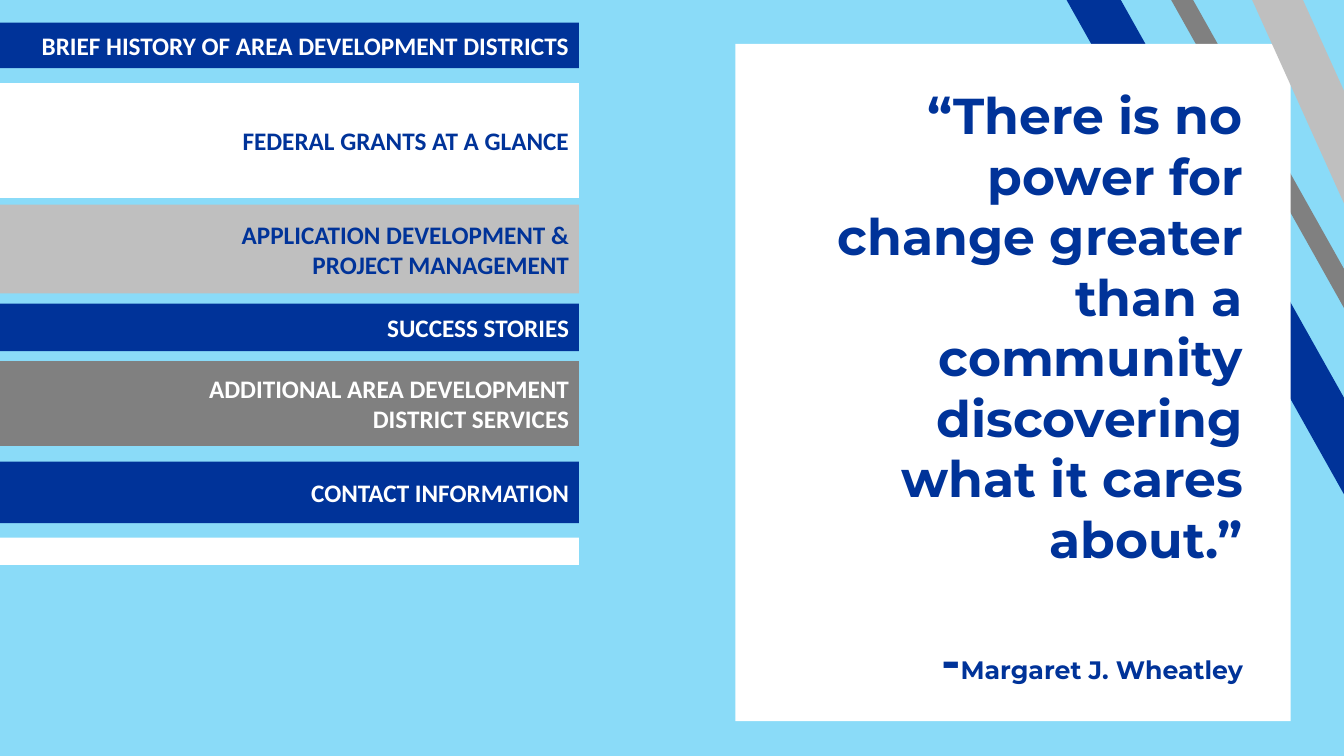
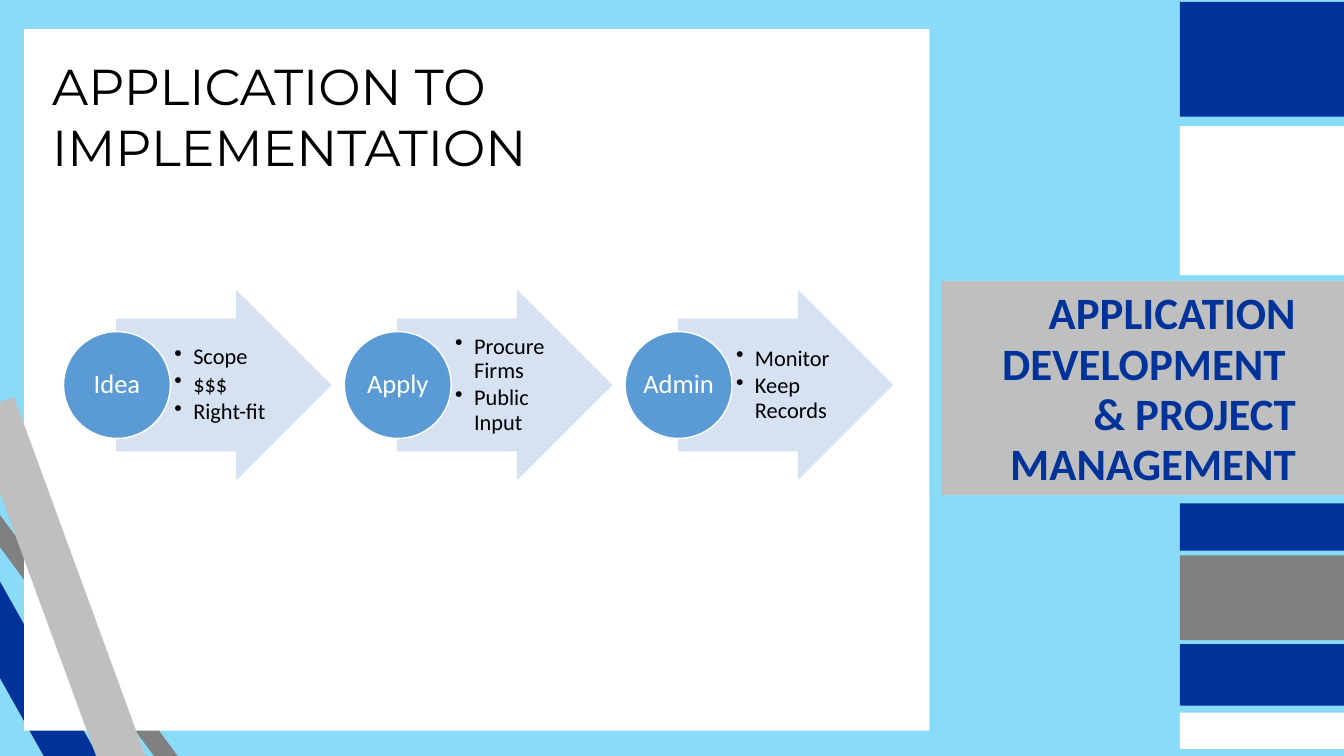
from lxml import etree
from pptx import Presentation
from pptx.dml.color import RGBColor
from pptx.enum import shapes, text
from pptx.oxml import ns
from pptx.util import Pt

SKY = RGBColor(0x8A, 0xDB, 0xF8)
NAVY = RGBColor(0x00, 0x33, 0x99)
WHITE = RGBColor(0xFF, 0xFF, 0xFF)
SILVER = RGBColor(0xBF, 0xBF, 0xBF)
GRAY = RGBColor(0x80, 0x80, 0x80)
BLACK = RGBColor(0x00, 0x00, 0x00)
DISC_BLUE = RGBColor(0x5B, 0x9B, 0xD5)
ARROW_BLUE = RGBColor(0xD6, 0xE1, 0xF1)

WIDTH, HEIGHT = 960, 540
BODY_FONT, HEAD_FONT = "Calibri", "Montserrat"
BAND_COLOURS = (NAVY, WHITE, SILVER, NAVY, GRAY, NAVY, WHITE)
STRIPE_COLOURS = (NAVY, GRAY, SILVER)
RIGHT, CENTER = text.PP_ALIGN.RIGHT, text.PP_ALIGN.CENTER
MIDDLE, TOP = text.MSO_ANCHOR.MIDDLE, text.MSO_ANCHOR.TOP
INSETS = (7.2, 3.6, 7.2, 3.6)


# Shared helpers
def add_page(deck):
    page = deck.slides.add_slide(deck.slide_layouts[6])
    page.background.fill.solid()
    page.background.fill.fore_color.rgb = SKY
    return page


def add_block(page, box, fill, kind=shapes.MSO_SHAPE.RECTANGLE, line=None):
    block = page.shapes.add_shape(kind, *map(Pt, box))
    block.shadow.inherit = False
    block.fill.solid()
    block.fill.fore_color.rgb = fill
    if line is None:
        block.line.fill.background()
    else:
        block.line.color.rgb = line
        block.line.width = Pt(1)
    return block


def format_span(span, font, size, colour, bold=False):
    span.font.name = font
    span.font.size = Pt(size)
    span.font.color.rgb = colour
    span.font.bold = bold


def write(shape, lines, font, size, colour, bold=False, align=None,
          anchor=TOP, insets=INSETS):
    frame = shape.text_frame
    frame.word_wrap = True
    frame.vertical_anchor = anchor
    (frame.margin_left, frame.margin_top,
     frame.margin_right, frame.margin_bottom) = map(Pt, insets)
    frame.text = "\n".join(lines)
    for para in frame.paragraphs:
        para.alignment = align
        for span in para.runs:
            format_span(span, font, size, colour, bold)
    return frame


def add_text(page, box, lines, *style, **layout):
    return write(page.shapes.add_textbox(*map(Pt, box)), lines, *style, **layout)


def add_bands(page, boxes):
    return [add_block(page, box, colour) for box, colour in zip(boxes, BAND_COLOURS)]


def add_card(page, box, stripes):
    """White card over two diagonal stripes and under the third."""
    def add_stripe(index):
        *stripe_box, angle = stripes[index]
        add_block(page, stripe_box, STRIPE_COLOURS[index]).rotation = angle

    add_stripe(0)
    add_stripe(1)
    add_block(page, box, WHITE)
    add_stripe(2)


# Slide 1: agenda and quotation
def add_agenda(page, left, width):
    # top, height, left text margin, label colour, label
    rows = (
        (16.2, 32.4, 7.2, WHITE, "BRIEF HISTORY OF AREA DEVELOPMENT DISTRICTS"),
        (59.4, 82, 120, NAVY, "FEDERAL GRANTS AT A GLANCE"),
        (146.2, 63.4, 120, NAVY, "APPLICATION DEVELOPMENT & PROJECT MANAGEMENT"),
        (217, 33.8, 120, WHITE, "SUCCESS STORIES"),
        (258, 60.5, 120, WHITE, "ADDITIONAL AREA DEVELOPMENT DISTRICT SERVICES"),
        (329.8, 44, 120, WHITE, "CONTACT INFORMATION"),
        (384, 19.5, 120, NAVY, None),
    )
    bands = add_bands(page, [(left, row[0], width, row[1]) for row in rows])
    for band, (_, _, margin, colour, label) in zip(bands, rows):
        if label:
            write(band, [label], BODY_FONT, 18, colour, bold=True, align=RIGHT,
                  anchor=MIDDLE, insets=(margin, 0, 7.2, 0))


def add_quote(page, box):
    left, top, width, height = box
    frame = add_text(
        page, (left + 35.7, top + 25.6, width - 62.6, height - 40),
        ["“There is no power for change greater than a community "
         "discovering what it cares about.”", "-"],
        HEAD_FONT, 36, NAVY, bold=True, align=RIGHT)
    credit = frame.paragraphs[1]
    credit.space_before = Pt(43.5)
    author = credit.add_run()
    author.text = "Margaret J. Wheatley"
    format_span(author, HEAD_FONT, 18, NAVY, bold=True)


def build_agenda_page(deck):
    page = add_page(deck)
    card = (525.2, 31.3, 396.7, 483.8)
    add_card(page, card, (
        (892.8, -74.2, 33.8, 606.2, 330.7),
        (982.8, -162.7, 13.7, 843.1, 330.7),
        (991.4, -100.1, 33.1, 622.8, 155.7)))
    add_agenda(page, 0, 413.6)
    add_quote(page, card)


# Slide 2: process steps and section marker
def add_section_bands(page):
    tab_left, section_left = 842.8, 672.3
    rows = ((1.4, 82), (90, 106.6), (200.9, 152.6), (359.6, 33.8),
            (396.7, 60.5), (460.1, 44), (509, 26))
    lefts = [section_left if colour == SILVER else tab_left
             for colour in BAND_COLOURS]
    bands = add_bands(page, [(left, top, WIDTH - left, height)
                             for left, (top, height) in zip(lefts, rows)])
    frame = write(bands[BAND_COLOURS.index(SILVER)],
                  ["APPLICATION DEVELOPMENT ", "& PROJECT MANAGEMENT"],
                  BODY_FONT, 32, NAVY, bold=True, align=RIGHT,
                  insets=(7.2, 5, 34.2, 0))
    for para in frame.paragraphs:
        para.line_spacing = Pt(36)


def add_bullet(para):
    props = para._p.get_or_add_pPr()
    props.set("marL", str(Pt(13.5)))
    props.set("indent", str(-Pt(13.5)))
    etree.SubElement(props, ns.qn("a:buChar")).set("char", "•")


def add_step(page, left, top, name, points):
    arrow = add_block(page, (left + 38.1, top, 152.6, 133.9), ARROW_BLUE,
                      shapes.MSO_SHAPE.RIGHT_ARROW, ARROW_BLUE)
    arrow.adjustments[0], arrow.adjustments[1] = 0.7, 0.5
    frame = add_text(page, (left + 76.3, top + 20.1, 74.9, 93.6), points,
                     BODY_FONT, 16, BLACK, anchor=MIDDLE,
                     insets=(2.9, 0.7, 1.4, 0.7))
    for para in frame.paragraphs:
        para.line_spacing = 0.9
        para.space_after = Pt(2.4)
        add_bullet(para)
    disc = add_block(page, (left, top + 28.8, 76.3, 76.3), DISC_BLUE,
                     shapes.MSO_SHAPE.OVAL, WHITE)
    label = write(disc, [name], BODY_FONT, 19, WHITE, align=CENTER,
                  anchor=MIDDLE, insets=(0, 0, 0, 0))
    label.paragraphs[0].line_spacing = 0.9


def build_process_page(deck):
    page = add_page(deck)
    card = (17.3, 20.9, 646.6, 501.1)
    add_card(page, card, (
        (-57.6, 74.2, 33.8, 606.2, 330.7),
        (43.9, 26.6, 13.7, 843.1, 323.6),
        (33.1, 279.4, 33.1, 321.1, 159.9)))
    add_section_bands(page)
    left, top = card[:2]
    add_text(page, (left + 12.9, top + 15.1, 621.4, 94.3),
             ["APPLICATION TO IMPLEMENTATION"], HEAD_FONT, 36, BLACK)
    steps = (("Idea", ["Scope", "$$$", "Right-fit"]),
             ("Apply", ["Procure Firms", "Public Input"]),
             ("Admin", ["Monitor", "Keep Records"]))
    for index, (name, points) in enumerate(steps):
        add_step(page, left + 28.1 + index * 200.6, top + 187.2, name, points)


def main():
    deck = Presentation()
    deck.slide_width, deck.slide_height = Pt(WIDTH), Pt(HEIGHT)
    build_agenda_page(deck)
    build_process_page(deck)
    deck.save("out.pptx")


if __name__ == "__main__":
    main()
